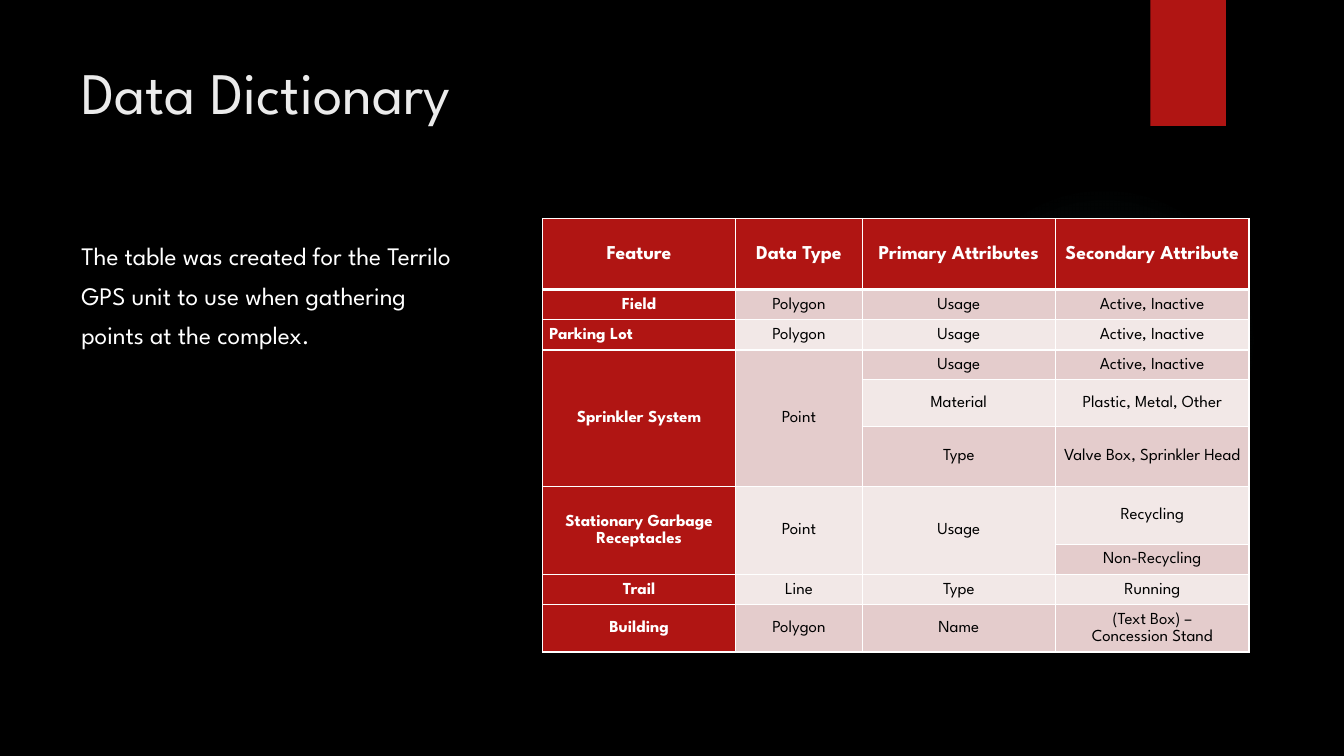
"""Build the Data Dictionary slide with its feature attribute table."""
import dataclasses

import lxml.etree
import pptx
import pptx.dml.color
import pptx.enum.shapes
import pptx.enum.text
import pptx.oxml
import pptx.oxml.ns
import pptx.util

Pt = pptx.util.Pt
Color = pptx.dml.color.RGBColor.from_string
Align = pptx.enum.text.PP_ALIGN
Anchor = pptx.enum.text.MSO_ANCHOR
Shape = pptx.enum.shapes.MSO_SHAPE


@dataclasses.dataclass(frozen=True)
class Theme:
    font: str = "League Spartan"
    black: str = "000000"
    white: str = "FFFFFF"
    title: str = "EBEBEB"
    red: str = "B01513"
    dark_band: str = "E4CCCC"
    light_band: str = "F2E8E7"
    glow: str = "50B9C1"
    title_size: int = 42
    body_size: int = 18
    header_size: int = 14
    cell_size: int = 12


theme = Theme()


def write_text(frame, text, *, size, color, bold=False, align=Align.LEFT, spacing=1.0):
    frame.word_wrap = True
    for index, line in enumerate(text.split("\n")):
        para = frame.add_paragraph() if index else frame.paragraphs[0]
        para.alignment = align
        para.line_spacing = spacing
        span = para.add_run()
        span.text = line
        span.font.name = theme.font
        span.font.size = Pt(size)
        span.font.bold = bold
        span.font.color.rgb = Color(color)


def add_border(cell, side, width):
    line = pptx.oxml.parse_xml(
        f'<a:{side} {pptx.oxml.ns.nsdecls("a")} w="{Pt(width)}"><a:solidFill>'
        f'<a:srgbClr val="{theme.white}"/></a:solidFill></a:{side}>'
    )
    cell._tc.get_or_add_tcPr().append(line)


deck = pptx.Presentation()
deck.slide_width, deck.slide_height = Pt(960), Pt(540)
page = deck.slides.add_slide(deck.slide_layouts[6])
page.background.fill.solid()
page.background.fill.fore_color.rgb = Color(theme.black)

glow = page.shapes.add_shape(Shape.OVAL, Pt(677.5), Pt(131.8), Pt(221.8), Pt(221.8))
glow.shadow.inherit = False
glow.line.fill.background()
glow.fill.gradient()
gradient = glow._element.spPr.find(pptx.oxml.ns.qn("a:gradFill"))
for child in list(gradient):
    gradient.remove(child)
stops = lxml.etree.SubElement(gradient, pptx.oxml.ns.qn("a:gsLst"))
for position, opacity in ((0, 7), (36, 6), (69, 0)):
    stop = lxml.etree.SubElement(stops, pptx.oxml.ns.qn("a:gs"), pos=str(position * 1000))
    color = lxml.etree.SubElement(stop, pptx.oxml.ns.qn("a:srgbClr"), val=theme.glow)
    lxml.etree.SubElement(color, pptx.oxml.ns.qn("a:alpha"), val=str(opacity * 1000))
circle = lxml.etree.SubElement(gradient, pptx.oxml.ns.qn("a:path"), path="circle")
lxml.etree.SubElement(
    circle, pptx.oxml.ns.qn("a:fillToRect"), l="50000", t="50000", r="50000", b="50000"
)

ribbon = page.shapes.add_shape(Shape.RECTANGLE, Pt(821.7), Pt(0), Pt(54), Pt(90))
ribbon.shadow.inherit = False
ribbon.fill.solid()
ribbon.fill.fore_color.rgb = Color(theme.red)
ribbon.line.fill.background()

title_box = page.shapes.add_textbox(Pt(51), Pt(36), Pt(741), Pt(110))
write_text(title_box.text_frame, "Data Dictionary", size=theme.title_size, color=theme.title)

note_box = page.shapes.add_textbox(Pt(51), Pt(162), Pt(288), Pt(138))
write_text(
    note_box.text_frame,
    "The table was created for the Terrilo GPS unit to use when gathering points at the complex.",
    size=theme.body_size, color=theme.white, spacing=1.3,
)

column_widths = [138.2, 90.2, 138.2, 138.2]
row_heights = [50.8, 21.5, 21.7, 21, 33.6, 42.7, 41.5, 21.5, 21.7, 33.9]
rows = [
    ("Feature", "Data Type", "Primary Attributes", "Secondary Attribute"),
    ("Field", "Polygon", "Usage", "Active, Inactive"),
    ("Parking Lot", "Polygon", "Usage", "Active, Inactive"),
    ("Sprinkler System", "Point", "Usage", "Active, Inactive"),
    ("", "", "Material", "Plastic, Metal, Other"),
    ("", "", "Type", "Valve Box, Sprinkler Head"),
    ("Stationary Garbage Receptacles", "Point", "Usage", "Recycling"),
    ("", "", "", "Non-Recycling"),
    ("Trail", "Line", "Type", "Running"),
    ("Building", "Polygon", "Name", "(Text Box) –\nConcession Stand"),
]
merges = [(3, 5, 0), (3, 5, 1), (6, 7, 0), (6, 7, 1), (6, 7, 2)]

table = page.shapes.add_table(
    len(rows), len(column_widths), Pt(387.4), Pt(156),
    Pt(sum(column_widths)), Pt(sum(row_heights)),
).table
for column, width in zip(table.columns, column_widths):
    column.width = Pt(width)
for row, height in zip(table.rows, row_heights):
    row.height = Pt(height)

for row_index, texts in enumerate(rows):
    for column_index, text in enumerate(texts):
        cell = table.cell(row_index, column_index)
        is_header = row_index == 0
        is_heading = is_header or column_index == 0
        band = theme.dark_band if row_index % 2 else theme.light_band
        add_border(cell, "lnL", 1)
        add_border(cell, "lnR", 1)
        add_border(cell, "lnT", 3 if row_index == 1 else 1)
        add_border(cell, "lnB", 3 if is_header else 1)
        cell.fill.solid()
        cell.fill.fore_color.rgb = Color(theme.red if is_heading else band)
        cell.vertical_anchor = Anchor.MIDDLE
        cell.margin_left = cell.margin_right = Pt(5)
        cell.margin_top = cell.margin_bottom = Pt(0)
        if text:
            write_text(
                cell.text_frame, text,
                size=theme.header_size if is_header else theme.cell_size,
                color=theme.white if is_heading else theme.black,
                bold=is_heading,
                align=Align.LEFT if text == "Parking Lot" else Align.CENTER,
                spacing=1.07,
            )

for first_row, last_row, column_index in merges:
    table.cell(first_row, column_index).merge(table.cell(last_row, column_index))

deck.save("out.pptx")
